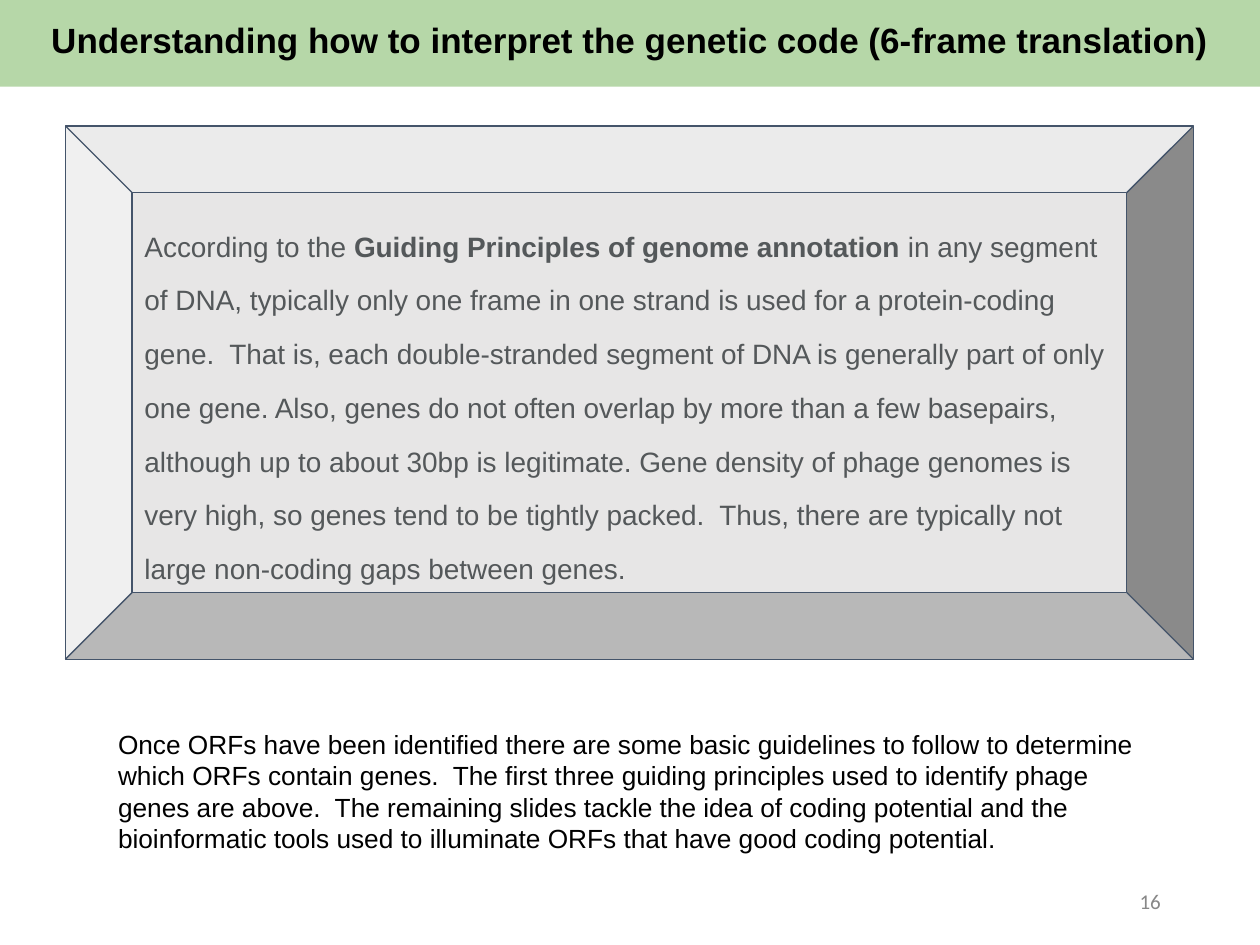
from dataclasses import dataclass

from pptx import Presentation
from pptx.dml.color import RGBColor
from pptx.enum.shapes import MSO_SHAPE as Shape
from pptx.enum.text import MSO_ANCHOR as Anchor, PP_ALIGN as Align
from pptx.util import Cm, Pt


@dataclass(frozen=True)
class Theme:
    banner: str = "B6D7A8"
    panel: str = "E7E6E6"
    panel_line: str = "44546A"
    panel_text: str = "54585A"
    text: str = "000000"
    number: str = "888888"
    font: str = "Arial"
    number_font: str = "Calibri"
    title_size: float = 20
    panel_size: float = 16
    body_size: float = 15
    number_size: float = 12


class SlideBuilder:
    def __init__(self, slide, theme):
        self.slide = slide
        self.theme = theme

    def set_text(self, shape, runs, size, color, font=None, align=Align.LEFT,
                 anchor=Anchor.TOP, spacing=1.0, inset=0.25):
        """Fill a shape with one paragraph made of (text, bold) runs."""
        frame = shape.text_frame
        frame.word_wrap = True
        frame.vertical_anchor = anchor
        frame.margin_left = frame.margin_right = Cm(0.25)
        frame.margin_top = frame.margin_bottom = Cm(inset)
        paragraph = frame.paragraphs[0]
        paragraph.alignment = align
        paragraph.line_spacing = spacing
        paragraph.font.name = font or self.theme.font
        paragraph.font.size = Pt(size)
        paragraph.font.color.rgb = RGBColor.from_string(color)
        for text, bold in runs:
            run = paragraph.add_run()
            run.text = text
            run.font.bold = bold

    def shape(self, kind, box, fill, line=None):
        shape = self.slide.shapes.add_shape(kind, *map(Cm, box))
        shape.shadow.inherit = False
        shape.fill.solid()
        shape.fill.fore_color.rgb = RGBColor.from_string(fill)
        if line:
            shape.line.color.rgb = RGBColor.from_string(line)
            shape.line.width = Pt(0.75)
        else:
            shape.line.fill.background()
        return shape

    def banner(self, box, title):
        theme = self.theme
        banner = self.shape(Shape.RECTANGLE, box, theme.banner)
        self.set_text(banner, [(title, True)], theme.title_size, theme.text,
                      align=Align.CENTER, spacing=1.15)

    def bevel_panel(self, box, runs):
        theme = self.theme
        panel = self.shape(Shape.BEVEL, box, theme.panel, theme.panel_line)
        panel.adjustments[0] = 0.125
        self.set_text(panel, runs, theme.panel_size, theme.panel_text,
                      anchor=Anchor.BOTTOM, spacing=1.6, inset=0.15)

    def body_text(self, box, text):
        text_box = self.slide.shapes.add_textbox(*map(Cm, box))
        self.set_text(text_box, [(text, False)], self.theme.body_size, self.theme.text)

    def page_number(self, box, number):
        theme = self.theme
        text_box = self.slide.shapes.add_textbox(*map(Cm, box))
        self.set_text(text_box, [(str(number), False)], theme.number_size, theme.number,
                      font=theme.number_font, align=Align.RIGHT, anchor=Anchor.MIDDLE,
                      inset=0.13)


def main():
    presentation = Presentation()
    presentation.slide_width, presentation.slide_height = Cm(25.4), Cm(19.05)
    slide = presentation.slides.add_slide(presentation.slide_layouts[6])
    builder = SlideBuilder(slide, Theme())

    builder.page_number((17.93, 17.66, 5.72, 1.01), 16)
    builder.bevel_panel((1.32, 2.54, 22.74, 10.75), [
        ("According to the ", False),
        ("Guiding Principles of genome annotation ", True),
        ("in any segment of DNA, typically only one frame in one strand is used "
         "for a protein-coding gene.  That is, each double-stranded segment of DNA "
         "is generally part of only one gene. Also, genes do not often overlap by "
         "more than a few basepairs, although up to about 30bp is legitimate. Gene "
         "density of phage genomes is very high, so genes tend to be tightly "
         "packed.  Thus, there are typically not large non-coding gaps between "
         "genes.", False),
    ])
    builder.banner(
        (0, 0, 25.4, 1.75),
        "Understanding how to interpret the genetic code (6-frame translation)")
    builder.body_text(
        (2.13, 14.43, 21.16, 3.07),
        "Once ORFs have been identified there are some basic guidelines to follow to "
        "determine which ORFs contain genes.  The first three guiding principles used "
        "to identify phage genes are above.  The remaining slides tackle the idea of "
        "coding potential and the bioinformatic tools used to illuminate ORFs that "
        "have good coding potential.")

    presentation.save("out.pptx")


if __name__ == "__main__":
    main()
